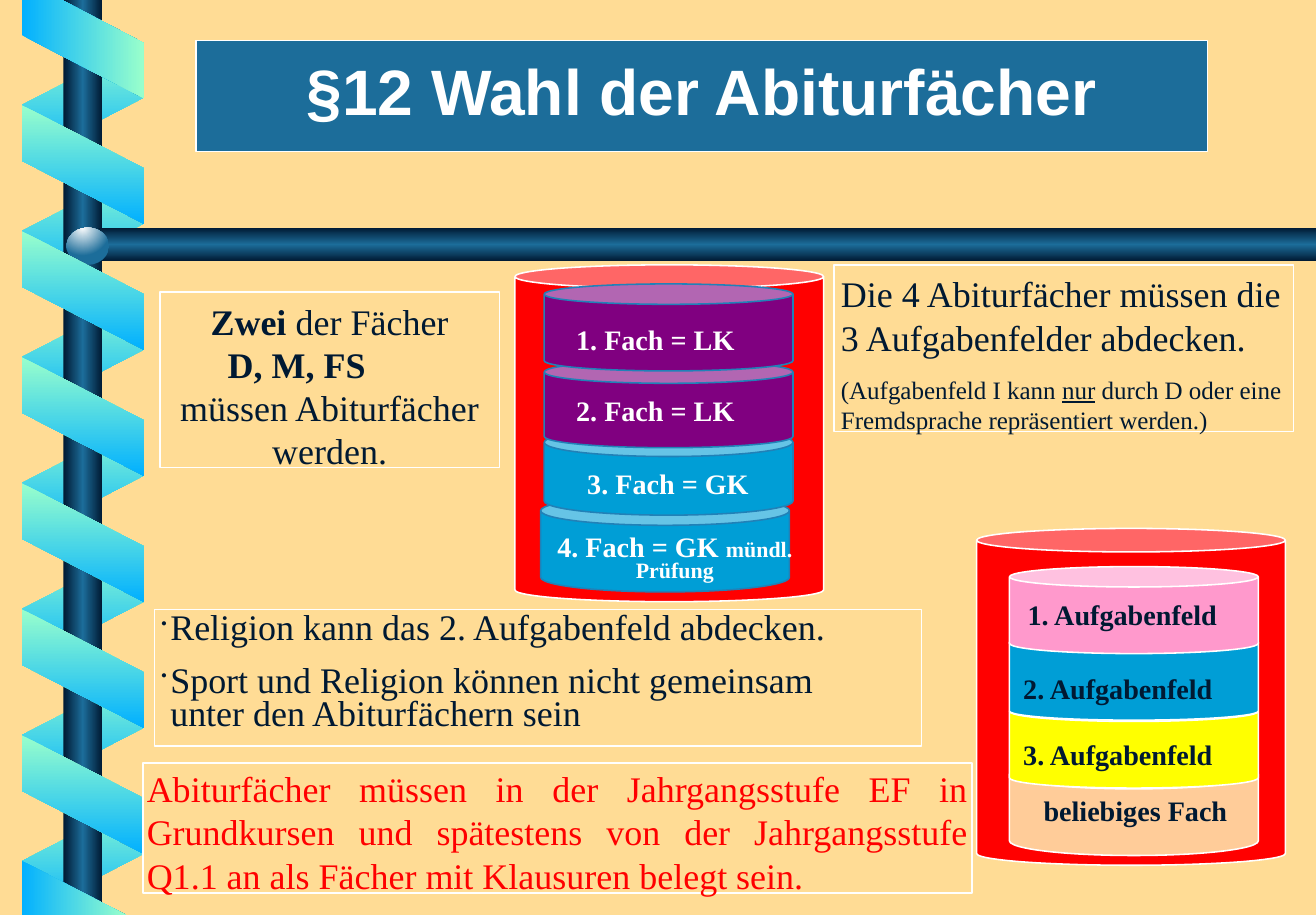
from pptx import Presentation
from pptx.dml.color import RGBColor as RGB
from pptx.enum.shapes import MSO_SHAPE as Kind
from pptx.enum.text import MSO_ANCHOR as Anchor, PP_ALIGN as Align
from pptx.oxml import parse_xml as parse
from pptx.oxml.ns import nsdecls as decls, qn
from pptx.util import Cm, Pt

SAND, WHITE, NAVY = RGB(255, 220, 149), RGB(255, 255, 255), RGB(0, 25, 50)
STEEL, EDGE, RED = RGB(28, 109, 154), RGB(33, 129, 183), RGB(255, 0, 0)
CYAN, PLUM, PEACH = RGB(0, 158, 214), RGB(128, 0, 128), RGB(255, 204, 153)
LEMON, PINK = RGB(255, 255, 0), RGB(255, 153, 204)
MINT, SKY, PEARL = RGB(153, 255, 204), RGB(1, 176, 255), RGB(254, 255, 255)

BODY = {"size": Pt(23), "name": "Times New Roman"}
SMALL = {**BODY, "size": Pt(16)}
LABEL = {**BODY, "size": Pt(18), "bold": True}
TITLE = {"size": Pt(41), "name": "Arial", "bold": True}
DOWN = '<a:lin ang="5400000" scaled="0"/>'
ACROSS = '<a:lin ang="0" scaled="0"/>'
GLOW = ('<a:path path="circle"><a:fillToRect l="38000" t="-20000" '
        'r="62000" b="120000"/></a:path>')


def blend(shape, tones, course):
    shape.shadow.inherit = False
    shape.line.fill.background()
    shape.fill.gradient()
    step = 100000 // (len(tones) - 1)
    stops = "".join(f'<a:gs pos="{i * step}"><a:srgbClr val="{tone}"/></a:gs>'
                    for i, tone in enumerate(tones))
    old = shape.element.spPr.find(qn("a:gradFill"))
    new = parse(f'<a:gradFill {decls("a")} rotWithShape="1">'
                f'<a:gsLst>{stops}</a:gsLst>{course}</a:gradFill>')
    old.getparent().replace(old, new)


def outline(slide, points, tones, course):
    first, *rest = [(Cm(x), Cm(y)) for x, y in points]
    form = slide.shapes.build_freeform(*first, scale=1.0)
    form.add_line_segments(rest, close=True)
    blend(form.convert_to_shape(), tones, course)


def solid(slide, kind, box, fill, edge, width=1):
    shape = slide.shapes.add_shape(kind, *map(Cm, box))
    shape.shadow.inherit = False
    if fill is None:
        shape.fill.background()
    else:
        shape.fill.solid()
        shape.fill.fore_color.rgb = fill
    shape.line.color.rgb = edge
    shape.line.width = Pt(width)
    return shape


def indent(para, left=0, right=0, bullet=False):
    props = para._p.get_or_add_pPr()
    props.set("marL", str(Cm(left)))
    props.set("marR", str(Cm(right)))
    if bullet:
        props.set("indent", str(-Cm(left)))
        for tag in (f'<a:buClr {decls("a")}><a:srgbClr val="{NAVY}"/></a:buClr>',
                    f'<a:buSzPct {decls("a")} val="45000"/>',
                    f'<a:buChar {decls("a")} char="•"/>'):
            props.append(parse(tag))


def write(shape, paras, color=NAVY, inset=0.16, anchor=Anchor.TOP):
    frame = shape.text_frame
    frame.word_wrap = True
    frame.vertical_anchor = anchor
    for side in ("left", "top", "right", "bottom"):
        setattr(frame, f"margin_{side}", Cm(inset))
    for i, (runs, form, shift) in enumerate(paras):
        para = frame.add_paragraph() if i else frame.paragraphs[0]
        indent(para, **shift)
        for key, value in {"alignment": Align.LEFT, **form}.items():
            setattr(para, key, value)
        for text, style in runs:
            run = para.add_run()
            run.text = text
            run.font.color.rgb = color
            for key, value in style.items():
                setattr(run.font, key, value)


def panel(slide, box, paras, **look):
    write(solid(slide, Kind.RECTANGLE, box, None, WHITE), paras, **look)


def helix(slide, left, right):
    drop, thick, pitch = 1.42, 1.25, 2.84

    def ribbon(start, end, y):
        outline(slide, [(start, y), (end, y + drop), (end, y + drop + thick),
                        (start, y + thick)], (MINT, SKY), DOWN)

    for i in range(7):
        ribbon(right, left, 0.95 + i * pitch)
    rod = slide.shapes.add_shape(Kind.RECTANGLE, Cm(1.43), 0, Cm(0.88), Cm(20.62))
    blend(rod, (NAVY, STEEL, NAVY), ACROSS)
    outline(slide, [(2.26, 5.13), (29.67, 5.13), (29.67, 5.89), (2.26, 5.89),
                    (1.78, 5.51)], (NAVY, STEEL, NAVY), DOWN)
    ball = slide.shapes.add_shape(Kind.OVAL, *map(Cm, (1.5, 5.13, 0.96, 0.84)))
    blend(ball, (PEARL, STEEL), GLOW)
    for i in range(6):
        ribbon(left, right, 2.37 + i * pitch)
    outline(slide, [(left, 0), (left, 0.79), (right, 2.21), (right, 0.97),
                    (1.4, 0)], (SKY, MINT), ACROSS)
    outline(slide, [(left, 19.4), (left, 20.62), (2.84, 20.62)], (SKY, MINT), ACROSS)


def can(slide, box, lid, fill, edge):
    shape = solid(slide, Kind.CAN, box, fill, edge)
    shape.adjustments[0] = lid / min(box[2:])


def drum(slide, x, y, edge, color, cans, labels):
    can(slide, (x, y, 6.96, 7.59), 0.53, RED, WHITE)
    for dx, dy, high, lid, fill in cans:
        can(slide, (x + dx, y + dy, 5.61, high), lid, fill, edge)
    for dx, dy, wide, runs, form in labels:
        box = slide.shapes.add_textbox(Cm(x + dx), Cm(y + dy), Cm(wide), Cm(0.99))
        write(box, [(runs, form, {})], color)


def subjects(slide, x, y):
    tight = {"alignment": Align.CENTER, "line_spacing": 0.75}
    cans = [(0.58, 5.21, 2.16, 0.66, CYAN), (0.66, 3.68, 1.96, 0.64, CYAN),
            (0.66, 2.16, 1.96, 0.51, PLUM), (0.66, 0.43, 1.96, 0.46, PLUM)]
    last = [("4. Fach = GK ", LABEL), ("mündl. Prüfung", {**LABEL, "size": Pt(14)})]
    labels = [(0.76, 5.97, 5.69, last, tight),
              (1.47, 4.37, 4.72, [("3. Fach = GK", LABEL)], {}),
              (1.22, 2.74, 4.98, [("2. Fach = LK", LABEL)], {}),
              (1.22, 1.14, 4.75, [("1. Fach = LK", LABEL)], {})]
    drum(slide, x, y, EDGE, WHITE, cans, labels)


def fields(slide, x, y):
    tight = {"alignment": Align.CENTER, "line_spacing": 0.75}
    cans = [(0.74, 5.21, 2.16, 0.66, PEACH), (0.74, 3.89, 1.96, 0.46, LEMON),
            (0.74, 2.36, 1.96, 0.41, CYAN), (0.74, 0.86, 1.96, 0.46, PINK)]
    labels = [(0.89, 5.99, 5.38, [("beliebiges Fach", LABEL)], tight)]
    labels += [(dx, dy, 5.3, [(f"{i}. Aufgabenfeld", LABEL)], {})
               for i, dx, dy in ((3, 0.89, 4.55), (2, 0.89, 3.05), (1, 0.99, 1.4))]
    drum(slide, x, y, WHITE, NAVY, cans, labels)


def heading(slide, box):
    shape = solid(slide, Kind.RECTANGLE, box, STEEL, WHITE, 0.75)
    form = {"alignment": Align.CENTER, "line_spacing": 0.85}
    write(shape, [([("§12 Wahl der Abiturfächer", TITLE)], form, {})],
          WHITE, anchor=Anchor.MIDDLE)


def cover(slide, box):
    panel(slide, box, [
        ([("Die 4 Abiturfächer müssen die 3 Aufgabenfelder abdecken.", BODY)], {}, {}),
        ([("(Aufgabenfeld I kann ", SMALL), ("nur", {**SMALL, "underline": True}),
          (" durch D oder eine Fremdsprache repräsentiert werden.)", SMALL)],
         {"space_before": Pt(10)}, {})])


def faith(slide, box):
    form = {"line_spacing": 0.7}
    mark = {"left": 0.2, "bullet": True}
    panel(slide, box, [
        ([("Religion kann das 2. Aufgabenfeld abdecken.", BODY)], form, mark),
        ([("Sport und Religion können nicht gemeinsam", BODY)],
         {**form, "space_before": Pt(14)}, mark),
        ([("unter den Abiturfächern sein", BODY)],
         {**form, "space_before": Pt(2)}, {"left": 0.2})])


def core(slide, box):
    mid = {"alignment": Align.CENTER}
    bold = {**BODY, "bold": True}
    panel(slide, box, [
        ([("Zwei", bold), (" der Fächer", BODY)], mid, {}),
        ([("D, M, FS", bold)], mid, {"right": 1.49}),
        ([("müssen Abiturfächer werden.", BODY)], mid, {})])


def rule(slide, box):
    text = ("Abiturfächer müssen in der Jahrgangsstufe EF in Grundkursen und "
            "spätestens von der Jahrgangsstufe Q1.1 an als Fächer mit Klausuren "
            "belegt sein.")
    panel(slide, box, [([(text, BODY)], {"alignment": Align.JUSTIFY}, {})],
          color=RED, inset=0.08)


def main():
    deck = Presentation()
    deck.slide_width, deck.slide_height = Cm(29.67), Cm(20.62)
    slide = deck.slides.add_slide(deck.slide_layouts[6])
    slide.background.fill.solid()
    slide.background.fill.fore_color.rgb = SAND
    helix(slide, 0.49, 3.24)
    heading(slide, (4.42, 0.91, 22.81, 2.51))
    subjects(slide, 11.61, 5.97)
    fields(slide, 22.02, 11.91)
    cover(slide, (18.8, 5.97, 10.36, 3.76))
    faith(slide, (3.48, 13.74, 17.3, 3.07))
    core(slide, (3.61, 6.58, 7.65, 3.96))
    rule(slide, (3.23, 17.2, 18.69, 2.92))
    deck.save("out.pptx")


if __name__ == "__main__":
    main()
